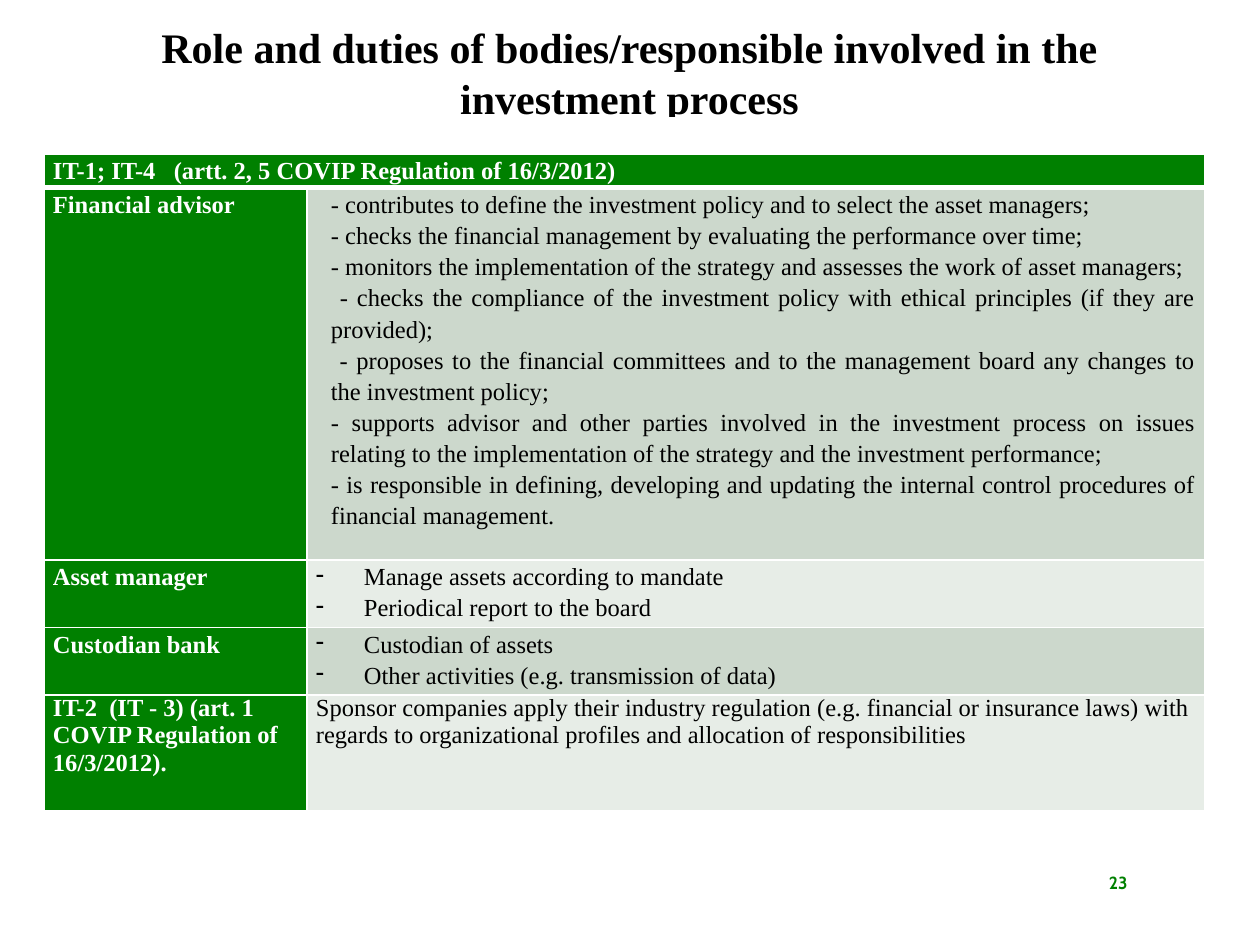
from dataclasses import dataclass
from lxml.etree import SubElement
from pptx import Presentation
from pptx.dml.color import RGBColor as Rgb
from pptx.enum.shapes import MSO_SHAPE as Kind
from pptx.enum.text import MSO_ANCHOR as Anchor, PP_ALIGN as Align
from pptx.oxml.ns import qn
from pptx.util import Emu, Pt


@dataclass(frozen=True)
class Theme:
    font: str = "Times New Roman"
    page_font: str = "Cabin"
    ink: str = "000000"
    white: str = "FFFFFF"
    green: str = "008000"
    bands: tuple = ("CCD8CC", "E7EDE7")
    title: int = 24
    body: int = 14
    page: int = 10


def px(n):
    return Emu(round(n * 914400 / 126))


class Deck:
    def __init__(self, theme):
        self.theme = theme
        self.prs = Presentation()
        self.prs.slide_width, self.prs.slide_height = px(1260), px(945)
        self.slide = self.prs.slides.add_slide(self.prs.slide_layouts[6])

    def run(self, para, text, size, color, bold=False, font=None):
        run = para.add_run()
        run.text = text
        run.font.name = font or self.theme.font
        run.font.size = Pt(size)
        run.font.bold = bold
        run.font.color.rgb = Rgb.from_string(color)

    def text(self, box, text, size, color, align, anchor, font=None):
        frame = self.slide.shapes.add_textbox(*map(px, box)).text_frame
        frame.word_wrap = True
        frame.vertical_anchor = anchor
        para = frame.paragraphs[0]
        para.alignment = align
        self.run(para, text, size, color, True, font)

    def rect(self, box, color):
        shape = self.slide.shapes.add_shape(Kind.RECTANGLE, *map(px, box))
        shape.shadow.inherit = False
        shape.fill.solid()
        shape.fill.fore_color.rgb = Rgb.from_string(color)
        shape.line.fill.background()

    def grid(self, left, top, cols, rows):
        frame = self.slide.shapes.add_table(
            len(rows), len(cols), *map(px, (left, top, sum(cols), sum(rows))))
        table = frame.table
        table.first_row = table.horz_banding = False
        for col, wide in zip(table.columns, cols):
            col.width = px(wide)
        for row, high in zip(table.rows, rows):
            row.height = px(high)
        return table

    def cell(self, cell, lines, fill, color, bold=False, space=1.15,
             style="", top=1, bottom=1):
        cell.margin_left = cell.margin_right = px(9)
        cell.margin_top = cell.margin_bottom = 0
        cell.fill.solid()
        cell.fill.fore_color.rgb = Rgb.from_string(fill)
        self.edges(cell, top, bottom)
        frame = cell.text_frame
        for i, line in enumerate(lines):
            para = frame.add_paragraph() if i else frame.paragraphs[0]
            para.line_spacing = space
            if style == "duty":
                para.alignment = Align.JUSTIFY
                self.indent(para, 15, 0)
            elif style == "dash":
                self.indent(para, 48, -48)
                SubElement(para._p.get_or_add_pPr(), qn("a:buChar"), char="-")
            self.run(para, line, self.theme.body, color, bold)

    def indent(self, para, left, first):
        props = para._p.get_or_add_pPr()
        props.set("marL", str(px(left)))
        props.set("indent", str(px(first)))

    def edges(self, cell, top, bottom):
        props = cell._tc.get_or_add_tcPr()
        for i, (side, wide) in enumerate(zip("LRTB", (1, 1, top, bottom))):
            line = SubElement(props, qn("a:ln" + side), w=str(Pt(wide)))
            fill = SubElement(line, qn("a:solidFill"))
            SubElement(fill, qn("a:srgbClr"), val=self.theme.white)
            props.insert(i, line)  # borders come before the fill

    def save(self):
        self.prs.save("out.pptx")


HEAD = "IT-1; IT-4   (artt. 2, 5 COVIP Regulation of 16/3/2012)"

# Body, lines, paragraph style, line spacing
ROLES = [
    ("Financial advisor", [
        "- contributes to define the investment policy and to select the "
        "asset managers; ",
        "- checks the financial management by evaluating the performance "
        "over time; ",
        "- monitors the implementation of the strategy and assesses the work "
        "of asset managers;",
        " - checks the compliance of the investment policy with ethical "
        "principles (if they are provided);",
        " - proposes to the financial committees and to the management board "
        "any changes to the investment policy; ",
        "- supports advisor and other parties involved in the investment "
        "process on issues relating to the implementation of the strategy "
        "and the investment performance; ",
        "- is responsible in defining, developing and updating the internal "
        "control procedures of financial management. ",
    ], "duty", 1.15),
    ("Asset manager", [
        "Manage assets according to mandate",
        "Periodical report to the board",
    ], "dash", 1.15),
    ("Custodian bank", [
        "Custodian of assets",
        "Other activities (e.g. transmission of data)",
    ], "dash", 1.15),
    ("IT-2  (IT - 3) (art. 1 COVIP Regulation of 16/3/2012).", [
        "Sponsor companies apply their industry regulation (e.g. financial "
        "or insurance laws) with regards to organizational profiles and "
        "allocation of responsibilities",
    ], "", 1.0),
]


def main():
    look = Theme()
    deck = Deck(look)

    # Title, with the white band below it
    deck.text((94, 32, 1071, 97),
              "Role and duties of bodies/responsible involved in the "
              "investment process",
              look.title, look.ink, Align.CENTER, Anchor.BOTTOM)
    deck.rect((76, 117, 1153, 55), look.white)

    # Table of roles
    table = deck.grid(44, 154, (263, 898), (32, 372, 62, 64, 116))
    table.cell(0, 0).merge(table.cell(0, 1))
    deck.cell(table.cell(0, 0), [HEAD], look.green, look.white, True, bottom=3)
    deck.edges(table.cell(0, 1), 1, 3)
    for i, (name, lines, style, space) in enumerate(ROLES):
        top = 1 if i else 3
        deck.cell(table.cell(i + 1, 0), [name], look.green, look.white, True,
                  space, top=top)
        deck.cell(table.cell(i + 1, 1), lines, look.bands[i % 2], look.ink,
                  False, space, style, top)

    # Page number
    deck.text((964, 858, 176, 50), "23", look.page, look.green,
              Align.RIGHT, Anchor.MIDDLE, look.page_font)
    deck.save()


if __name__ == "__main__":
    main()
